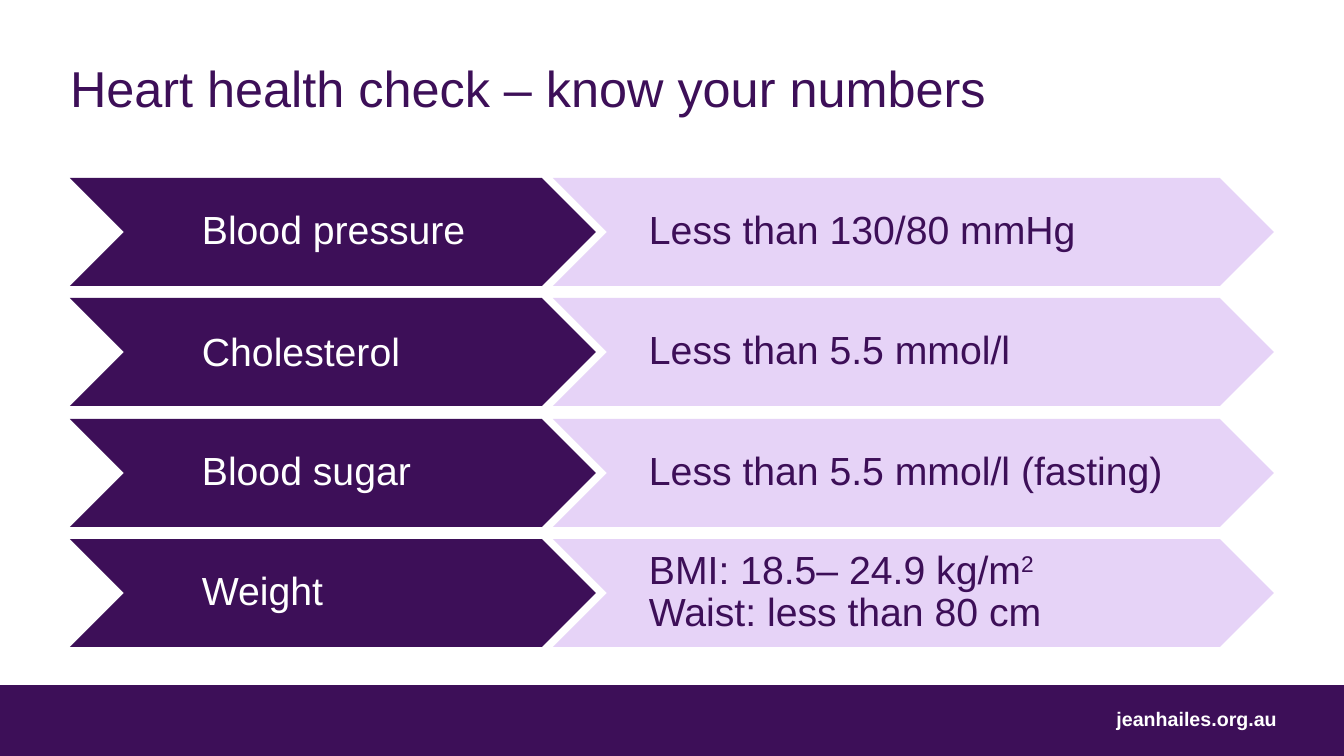
from dataclasses import dataclass
from lxml.etree import SubElement
from pptx import Presentation
from pptx.dml.color import RGBColor
from pptx.enum.shapes import MSO_SHAPE as Shape
from pptx.enum.text import MSO_ANCHOR as Anchor, PP_ALIGN as Align
from pptx.oxml.ns import qn
from pptx.util import Emu, Pt

# Content: a label, then lines of (text, superscript)
TITLE = "Heart health check – know your numbers"
WEBSITE = "jeanhailes.org.au"
CHECKS = [
    ("Blood pressure", [("Less than 130/80 mmHg", "")]),
    ("Cholesterol", [("Less than 5.5 mmol/l", "")]),
    ("Blood sugar", [("Less than 5.5 mmol/l (fasting)", "")]),
    ("Weight", [("BMI: 18.5– 24.9 kg/m", "2"), ("Waist: less than 80 cm", "")]),
]


@dataclass(frozen=True)
class Theme:
    font: str = "Arial"
    dark: str = "3D0F58"
    light: str = "E0C9F6"
    white: str = "FFFFFF"
    light_opacity: int = 80
    title_size: int = 36
    body_size: int = 28
    footer_size: int = 14


THEME = Theme()

# Layout in px
WIDTH, HEIGHT = 1344, 756
ROW_TOP, ROW_HEIGHT, LAST_ROW_OFFSET = 178, 108, 361
LABEL_ARROW, LABEL_TEXT = (70, 526), (190, 404)    # left, width
TARGET_ARROW, TARGET_TEXT = (553, 721), (637, 553)
LABEL_NUDGE = {"Cholesterol": 2}
FOOTER_TOP = 685
BODY_INSETS = (12, 4, 4, 4)
DEFAULT_INSETS = (10, 5, 10, 5)


def px(value):
    return Emu(round(value * 914400 / 100.8))


def place(shape, left, top, width, height):
    shape.left, shape.top, shape.width, shape.height = map(px, (left, top, width, height))


def add_block(slide, kind, left, top, width, height, color, opacity=100):
    shape = slide.shapes.add_shape(kind, *map(px, (left, top, width, height)))
    shape.shadow.inherit = False
    shape.fill.solid()
    shape.fill.fore_color.rgb = RGBColor.from_string(color)
    shape.line.fill.background()
    if opacity < 100:
        fill_color = shape._element.spPr.find(qn("a:solidFill"))[0]
        SubElement(fill_color, qn("a:alpha")).set("val", str(opacity * 1000))
    return shape


def write(shape, lines, *, size, color, bold=False, align=Align.LEFT,
          anchor=Anchor.TOP, insets=DEFAULT_INSETS, spacing=1.0):
    frame = shape.text_frame
    frame.word_wrap = True
    frame.vertical_anchor = anchor
    (frame.margin_left, frame.margin_top,
     frame.margin_right, frame.margin_bottom) = map(px, insets)
    paragraph = frame.paragraphs[0]
    paragraph.alignment = align
    paragraph.line_spacing = spacing
    for number, (text, superscript) in enumerate(lines):
        if number:
            paragraph.add_line_break()
        for part, baseline in ((text, None), (superscript, "30000")):
            if not part:
                continue
            run = paragraph.add_run()
            run.text = part
            run.font.name, run.font.size, run.font.bold = THEME.font, Pt(size), bold
            run.font.color.rgb = RGBColor.from_string(color)
            if baseline:
                run._r.get_or_add_rPr().set("baseline", baseline)


def add_text(slide, lines, left, top, width, height, **text_format):
    box = slide.shapes.add_textbox(*map(px, (left, top, width, height)))
    write(box, lines, **text_format)


def main():
    presentation = Presentation()
    presentation.slide_width, presentation.slide_height = px(WIDTH), px(HEIGHT)
    slide = presentation.slides.add_slide(presentation.slide_layouts[5])

    # Footer band
    add_block(slide, Shape.RECTANGLE, 0, FOOTER_TOP, WIDTH, HEIGHT - FOOTER_TOP, THEME.dark)
    add_text(slide, [(WEBSITE, "")], 994, 702, 293, 34, size=THEME.footer_size,
             color=THEME.white, bold=True, align=Align.RIGHT)

    # Title
    title = slide.shapes.title
    place(title, 70, 52, 1218, 108)
    write(title, [(TITLE, "")], size=THEME.title_size, color=THEME.dark,
          insets=(0, 5, 10, 5))

    # Rows of paired chevrons
    body = dict(size=THEME.body_size, anchor=Anchor.MIDDLE, insets=BODY_INSETS, spacing=0.9)
    for row, (label, target) in enumerate(CHECKS):
        top = ROW_TOP + round(row * LAST_ROW_OFFSET / (len(CHECKS) - 1))
        for arrow, text, lines, fill, color, opacity, nudge in (
            (LABEL_ARROW, LABEL_TEXT, [(label, "")], THEME.dark, THEME.white,
             100, LABEL_NUDGE.get(label, 0)),
            (TARGET_ARROW, TARGET_TEXT, target, THEME.light, THEME.dark,
             THEME.light_opacity, 0),
        ):
            add_block(slide, Shape.CHEVRON, arrow[0], top, arrow[1], ROW_HEIGHT, fill, opacity)
            add_text(slide, lines, text[0], top + nudge, text[1], ROW_HEIGHT,
                     color=color, **body)

    presentation.save("out.pptx")


if __name__ == "__main__":
    main()
